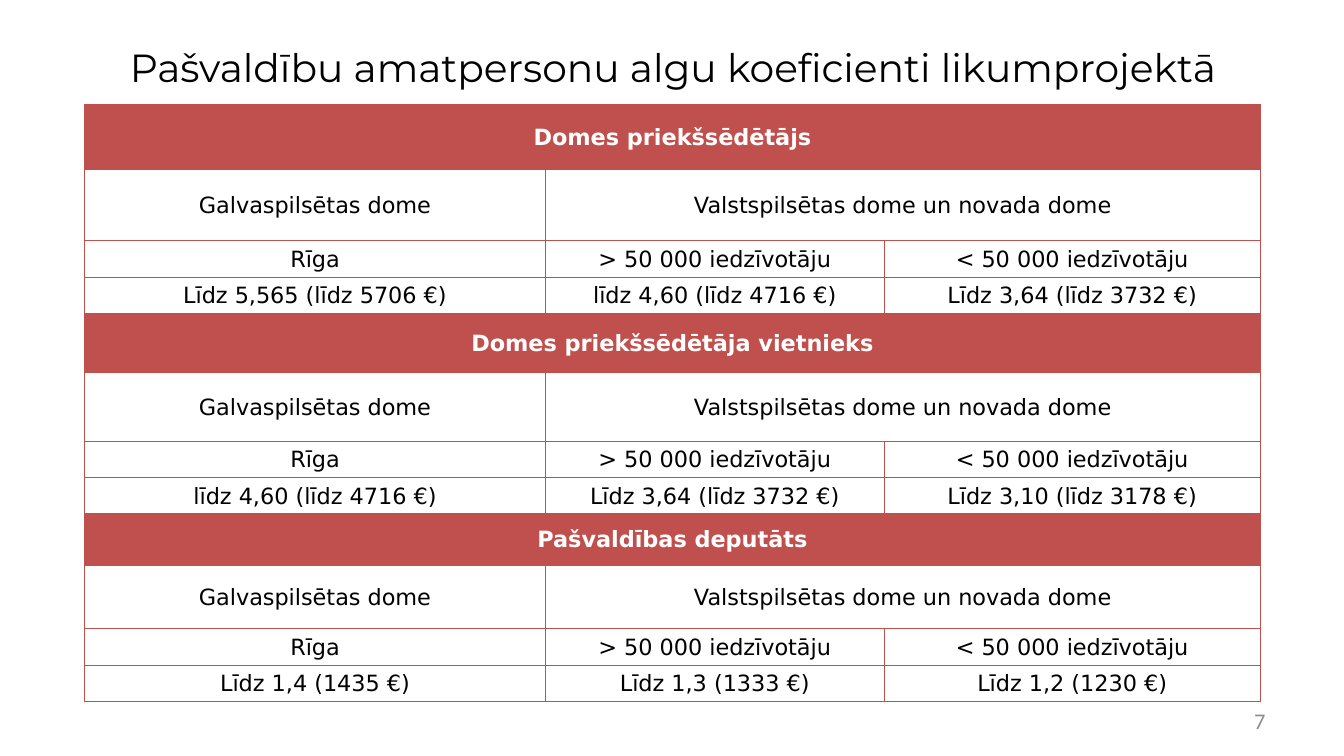
from dataclasses import dataclass

from lxml.etree import SubElement
from pptx import Presentation
from pptx.dml.color import RGBColor as Rgb
from pptx.enum.text import MSO_ANCHOR as Anchor, PP_ALIGN as Align
from pptx.oxml.ns import qn
from pptx.util import Emu, Pt

PX = 9144


@dataclass(frozen=True)
class Theme:
    accent: str = "C0504D"
    ink: str = "000000"
    inverse: str = "FFFFFF"
    muted: str = "8C8C8C"
    title_size: int = 28
    body_size: int = 16
    border: int = 1
    title_font: str = "Montserrat"
    body_font: str = "DejaVu Sans"
    number_font: str = "Calibri"


THEME = Theme()
COLUMNS = [457, 336, 373]
CAPITAL, OTHERS = "Galvaspilsētas dome", "Valstspilsētas dome un novada dome"
POPULATIONS = ["Rīga", "> 50 000 iedzīvotāju", "< 50 000 iedzīvotāju"]
OFFICES = [
    ("Domes priekšsēdētājs", [64, 71, 36, 36],
     ["Līdz 5,565 (līdz 5706 €)", "līdz 4,60 (līdz 4716 €)", "Līdz 3,64 (līdz 3732 €)"]),
    ("Domes priekšsēdētāja vietnieks", [59, 68, 36, 36],
     ["līdz 4,60 (līdz 4716 €)", "Līdz 3,64 (līdz 3732 €)", "Līdz 3,10 (līdz 3178 €)"]),
    ("Pašvaldības deputāts", [51, 63, 36, 36],
     ["Līdz 1,4 (1435 €)", "Līdz 1,3 (1333 €)", "Līdz 1,2 (1230 €)"]),
]


def px(*lengths):
    return [Emu(length * PX) for length in lengths]


def write(frame, text, size, font, color, align, bold=False):
    paragraph = frame.paragraphs[0]
    paragraph.text = text
    paragraph.alignment = align
    paragraph.font.size = Pt(size)
    paragraph.font.name = font
    paragraph.font.bold = bold
    paragraph.font.color.rgb = Rgb.from_string(color)


def add_line_of_text(slide, box, text, size, font, color, align):
    frame = slide.shapes.add_textbox(*px(*box)).text_frame
    frame.word_wrap = True
    frame.vertical_anchor = Anchor.MIDDLE
    write(frame, text, size, font, color, align)


def add_borders(cell):
    properties = cell._tc.get_or_add_tcPr()
    for side in ("a:lnL", "a:lnR", "a:lnT", "a:lnB"):
        edge = SubElement(properties, qn(side), w=str(Pt(THEME.border)))
        fill = SubElement(edge, qn("a:solidFill"))
        SubElement(fill, qn("a:srgbClr"), val=THEME.accent)


def style_cell(cell, text, is_heading):
    cell.margin_left, cell.margin_right, cell.margin_top, cell.margin_bottom = px(1, 1, 1, 0)
    cell.vertical_anchor = Anchor.MIDDLE
    add_borders(cell)
    if is_heading:
        cell.fill.solid()
        cell.fill.fore_color.rgb = Rgb.from_string(THEME.accent)
    else:
        cell.fill.background()
    write(cell.text_frame, text, THEME.body_size, THEME.body_font,
          THEME.inverse if is_heading else THEME.ink, Align.CENTER, is_heading)


def add_salary_table(slide, left, top):
    heights = [height for _, office_heights, _ in OFFICES for height in office_heights]
    box = px(left, top, sum(COLUMNS), sum(heights))
    table = slide.shapes.add_table(len(heights), len(COLUMNS), *box).table
    table.first_row = table.horz_banding = False
    for column, width in zip(table.columns, px(*COLUMNS)):
        column.width = width
    for row, height in zip(table.rows, px(*heights)):
        row.height = height

    for index, (office, office_heights, salaries) in enumerate(OFFICES):
        first = index * len(office_heights)
        rows = [[office, "", ""], [CAPITAL, OTHERS, ""], POPULATIONS, salaries]
        for offset, texts in enumerate(rows):
            for column, text in enumerate(texts):
                style_cell(table.cell(first + offset, column), text, offset == 0)
        table.cell(first, 0).merge(table.cell(first, 2))
        table.cell(first + 1, 1).merge(table.cell(first + 1, 2))


def main():
    deck = Presentation()
    deck.slide_width, deck.slide_height = px(1333, 750)
    slide = deck.slides.add_slide(deck.slide_layouts[6])
    add_line_of_text(slide, (25, 30, 1285, 73),
                     "Pašvaldību amatpersonu algu koeficienti likumprojektā",
                     THEME.title_size, THEME.title_font, THEME.ink, Align.CENTER)
    add_salary_table(slide, 84, 104)
    add_line_of_text(slide, (954, 695, 311, 40), "7",
                     THEME.body_size, THEME.number_font, THEME.muted, Align.RIGHT)
    deck.save("out.pptx")


if __name__ == "__main__":
    main()
